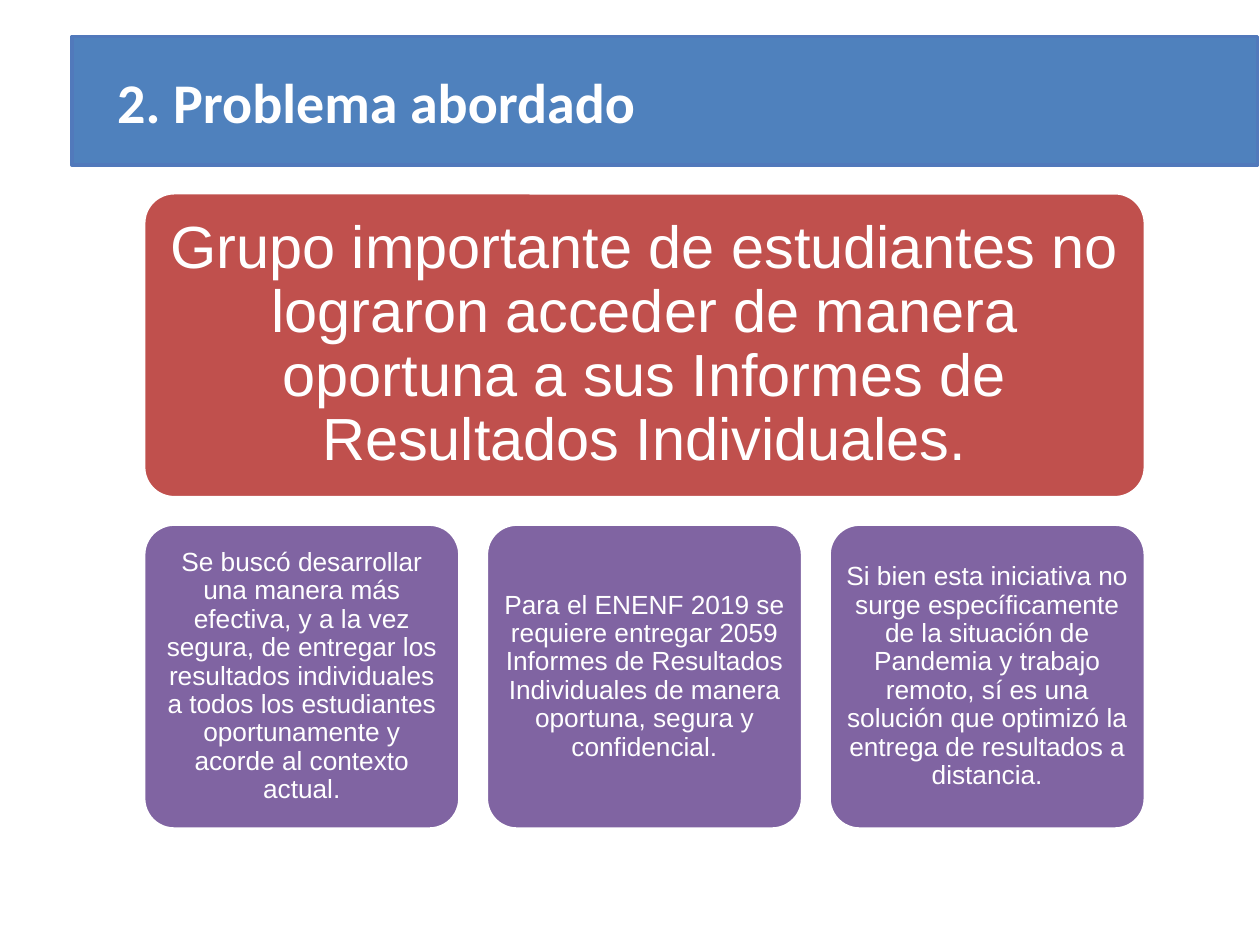
from pptx import Presentation
from pptx.dml.color import RGBColor
from pptx.enum import shapes, text
from pptx.util import Inches, Pt

TITLE = "2. Problema abordado"
PROBLEM = ("Grupo importante de estudiantes no lograron acceder de manera oportuna "
           "a sus Informes de Resultados Individuales.")
DETAILS = [
    "Se buscó desarrollar una manera más efectiva, y a la vez segura, de entregar "
    "los resultados individuales a todos los estudiantes oportunamente y acorde "
    "al contexto actual.",
    "Para el ENENF 2019 se requiere entregar 2059 Informes de Resultados "
    "Individuales de manera oportuna, segura y confidencial.",
    "Si bien esta iniciativa no surge específicamente de la situación de Pandemia "
    "y trabajo remoto, sí es una solución que optimizó la entrega de resultados "
    "a distancia.",
]

WHITE = RGBColor(0xFF, 0xFF, 0xFF)
BLUE = RGBColor(0x4F, 0x81, 0xBD)
BLUE_EDGE = RGBColor(0x51, 0x79, 0xBB)
RED = RGBColor(0xC0, 0x50, 0x4D)
PURPLE = RGBColor(0x80, 0x64, 0xA2)

# Card grid, in inches
LEFT, TOP, WIDTH, HEIGHT = 1.14, 1.53, 7.95, 2.42
GAP = 0.21
CARD_WIDTH = (WIDTH - GAP * (len(DETAILS) - 1)) / len(DETAILS)


def write(box, words, size, font="Arial", bold=False, align=text.PP_ALIGN.CENTER,
          side=0.06, edge=0.06, spacing=0.9):
    frame = box.text_frame
    frame.word_wrap = True
    frame.vertical_anchor = text.MSO_ANCHOR.MIDDLE
    frame.margin_left = frame.margin_right = Inches(side)
    frame.margin_top = frame.margin_bottom = Inches(edge)
    para = frame.paragraphs[0]
    para.alignment = align
    para.line_spacing = spacing
    span = para.add_run()
    span.text = words
    span.font.name = font
    span.font.size = Pt(size)
    span.font.bold = bold
    span.font.color.rgb = WHITE


def add_box(page, kind, left, top, width, height, fill, line):
    box = page.shapes.add_shape(kind, Inches(left), Inches(top),
                                Inches(width), Inches(height))
    box.shadow.inherit = False
    box.fill.solid()
    box.fill.fore_color.rgb = fill
    box.line.color.rgb = line
    box.line.width = Pt(2)
    return box


def add_card(page, words, left, top, width, fill, size, inset):
    card = add_box(page, shapes.MSO_SHAPE.ROUNDED_RECTANGLE,
                   left, top, width, HEIGHT, fill, WHITE)
    card.adjustments[0] = 0.1
    write(card, words, size, side=inset, edge=inset)


def main():
    deck = Presentation()
    deck.slide_width, deck.slide_height = Inches(10), Inches(7.5)
    page = deck.slides.add_slide(deck.slide_layouts[6])

    # Title bar
    bar = add_box(page, shapes.MSO_SHAPE.RECTANGLE, 0.57, 0.29, 9.41, 1.02,
                  BLUE, BLUE_EDGE)
    write(bar, TITLE, 32, font="Calibri", bold=True, align=text.PP_ALIGN.LEFT,
          side=0.36, spacing=1.0)

    # Main problem, with the details in a row below
    add_card(page, PROBLEM, LEFT, TOP, WIDTH, RED, 34, 0.14)
    for column, words in enumerate(DETAILS):
        add_card(page, words, LEFT + column * (CARD_WIDTH + GAP),
                 TOP + HEIGHT + GAP, CARD_WIDTH, PURPLE, 15, 0.06)

    deck.save("out.pptx")


if __name__ == "__main__":
    main()
